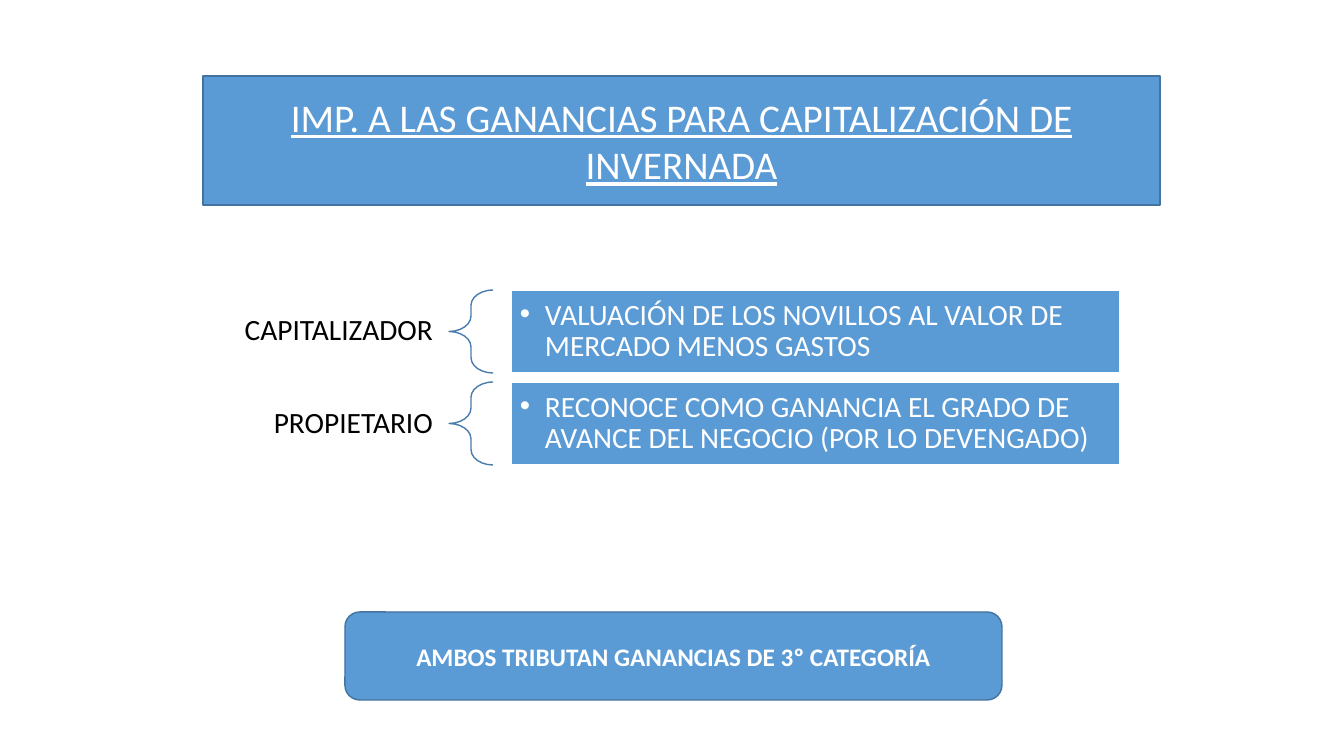
"""Build the slide on income tax for the two parties of a cattle fattening deal."""
import pptx
import pptx.dml.color
import pptx.enum.shapes
import pptx.enum.text
import pptx.util

EMU_PER_PX = 914400 / 100.8
BLUE = pptx.dml.color.RGBColor(0x5B, 0x9B, 0xD5)
EDGE_BLUE = pptx.dml.color.RGBColor(0x43, 0x73, 0x9E)
BRACE_BLUE = pptx.dml.color.RGBColor(0x49, 0x7C, 0xAB)
WHITE = pptx.dml.color.RGBColor(0xFF, 0xFF, 0xFF)
BLACK = pptx.dml.color.RGBColor(0x00, 0x00, 0x00)

MSO_SHAPE = pptx.enum.shapes.MSO_SHAPE
PP_ALIGN = pptx.enum.text.PP_ALIGN

TITLE = "IMP. A LAS GANANCIAS PARA CAPITALIZACIÓN DE INVERNADA"
CONCLUSION = "AMBOS TRIBUTAN GANANCIAS DE 3º CATEGORÍA"
PARTIES = [
    ("CAPITALIZADOR", "VALUACIÓN DE LOS NOVILLOS AL VALOR DE MERCADO MENOS GASTOS"),
    ("PROPIETARIO", "RECONOCE COMO GANANCIA EL GRADO DE AVANCE DEL NEGOCIO (POR LO DEVENGADO)"),
]
FIRST_ROW_TOP = 290
ROW_PITCH = 92
ROW_HEIGHT = 83


def px(length):
    return pptx.util.Emu(round(length * EMU_PER_PX))


def place(element, left, top, width, height):
    element.left, element.top = px(left), px(top)
    element.width, element.height = px(width), px(height)


def paint(element, edge):
    element.fill.solid()
    element.fill.fore_color.rgb = BLUE
    element.line.color.rgb = edge
    element.line.width = pptx.util.Pt(1)


def write(element, text, size, color, align, inset_x=10, inset_y=5):
    frame = element.text_frame
    frame.text = text
    frame.word_wrap = True
    frame.auto_size = pptx.enum.text.MSO_AUTO_SIZE.NONE
    frame.vertical_anchor = pptx.enum.text.MSO_ANCHOR.MIDDLE
    frame.margin_left = frame.margin_right = px(inset_x)
    frame.margin_top = frame.margin_bottom = px(inset_y)
    paragraph = frame.paragraphs[0]
    paragraph.alignment = align
    paragraph.space_before = pptx.util.Pt(0)
    paragraph.font.name = "Calibri"
    paragraph.font.size = pptx.util.Pt(size)
    paragraph.font.color.rgb = color
    return paragraph


def add_label(slide, party, top):
    label = slide.shapes.add_textbox(px(225), px(top + 19), px(224), px(45))
    write(label, party, 21, BLACK, PP_ALIGN.RIGHT, 16, 6).line_spacing = 0.9


def add_brace(slide, top):
    brace = slide.shapes.add_shape(
        MSO_SHAPE.LEFT_BRACE, px(449), px(top), px(44), px(ROW_HEIGHT))
    brace.shadow.inherit = False
    brace.adjustments[0] = 0.35
    brace.adjustments[1] = 0.5
    brace.fill.background()
    brace.line.color.rgb = BRACE_BLUE
    brace.line.width = pptx.util.Pt(1)


def fill_treatment(treatment, text, top):
    place(treatment, 511, top, 609, ROW_HEIGHT)
    paint(treatment, WHITE)
    paragraph = write(treatment, text, 21, WHITE, PP_ALIGN.LEFT, 9, 9)
    paragraph.line_spacing = 0.9
    indent = px(25)
    properties = paragraph._p.get_or_add_pPr()
    properties.set("marL", str(indent))
    properties.set("indent", str(-indent))


def fill_title(title):
    place(title, 203, 76, 957, 129)
    paint(title, EDGE_BLUE)
    write(title, TITLE, 28, WHITE, PP_ALIGN.CENTER).font.underline = True


def add_conclusion(slide):
    conclusion = slide.shapes.add_shape(
        MSO_SHAPE.ROUNDED_RECTANGLE, px(345), px(612), px(657), px(88))
    conclusion.shadow.inherit = False
    paint(conclusion, EDGE_BLUE)
    write(conclusion, CONCLUSION, 18, WHITE, PP_ALIGN.CENTER).font.bold = True


def main():
    presentation = pptx.Presentation()
    presentation.slide_width, presentation.slide_height = px(1344), px(756)
    two_content = presentation.slide_layouts[3]
    slide = presentation.slides.add_slide(two_content)
    fill_title(slide.shapes.title)
    for row, (party, treatment) in enumerate(PARTIES):
        top = FIRST_ROW_TOP + row * ROW_PITCH
        add_label(slide, party, top)
        add_brace(slide, top)
        fill_treatment(slide.placeholders[row + 1], treatment, top)
    add_conclusion(slide)
    presentation.save("out.pptx")


if __name__ == "__main__":
    main()
